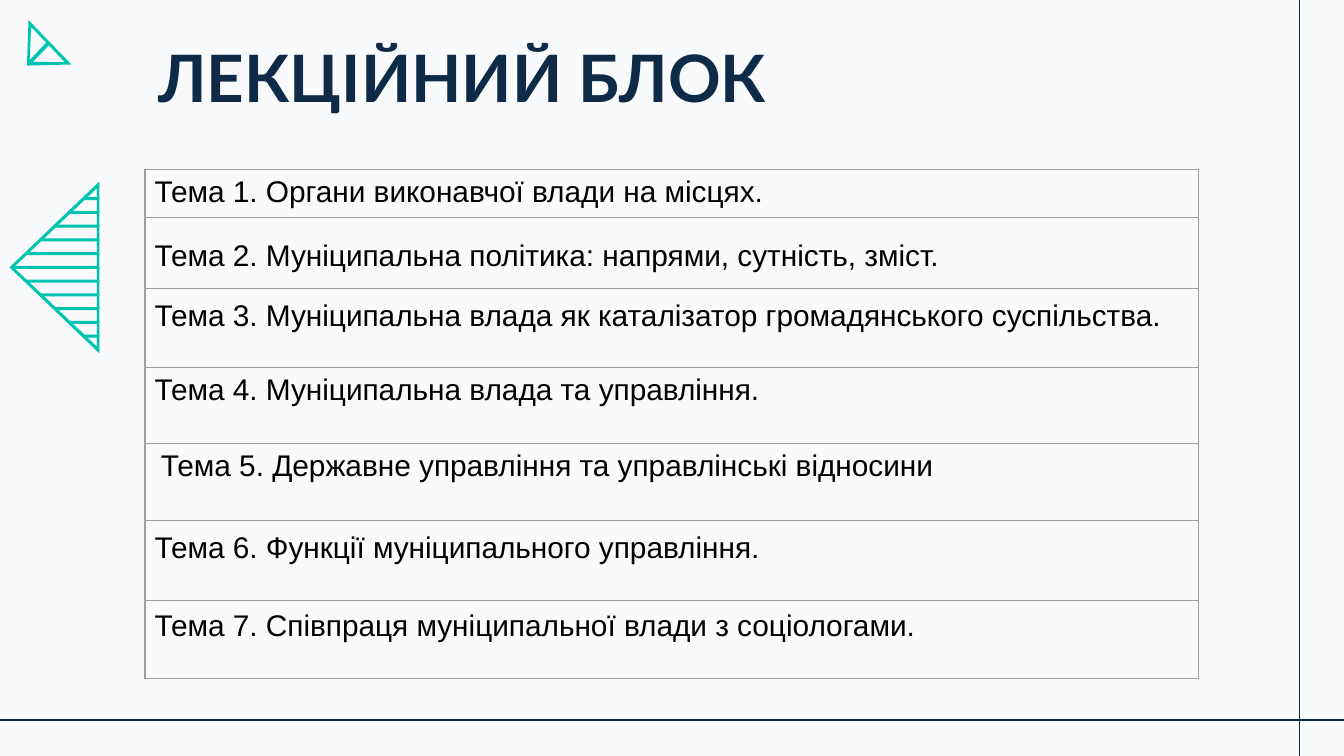
import pptx
import pptx.dml.color
import pptx.enum.shapes
import pptx.enum.text
import pptx.oxml
import pptx.oxml.ns
import pptx.util
from pptx.util import Cm

COLORS = {
    "background": "F8FAFB",
    "navy": "0E2A47",
    "teal": "00C3B1",
    "border": "9E9E9E",
    "text": "000000",
}

# Topic, row height (cm), line spacing, left indent (cm)
TOPICS = [
    ("Тема 1. Органи виконавчої влади на місцях.", 0.91, 1.07, 0.18),
    ("Тема 2. Муніципальна політика: напрями, сутність, зміст.", 1.34, 1.07, 0.18),
    ("Тема 3. Муніципальна влада як каталізатор громадянського суспільства.", 1.49, 1.2, 0.18),
    ("Тема 4. Муніципальна влада та управління.", 1.44, 1.07, 0.18),
    ("Тема 5. Державне управління та управлінські відносини", 1.46, 1.07, 0.3),
    ("Тема 6. Функції муніципального управління.", 1.51, 1.2, 0.18),
    ("Тема 7. Співпраця муніципальної влади з соціологами.", 1.47, 1.15, 0.18),
]
CENTERED_ROW = 1


def color(name):
    return pptx.dml.color.RGBColor.from_string(COLORS[name])


def paint(shape):
    shape.shadow.inherit = False
    shape.fill.solid()
    shape.fill.fore_color.rgb = color("teal")
    shape.line.fill.background()


def format_run(paragraph, font_name, size, color_name, bold=False):
    font = paragraph.runs[0].font
    font.name = font_name
    font.size = pptx.util.Pt(size)
    font.bold = bold
    font.color.rgb = color(color_name)


def add_outline(slide, box, *contours):
    """Fill closed contours given in cm from the corner of the box."""
    left, top = box[:2]
    builder = None
    for contour in contours:
        points = [(Cm(left + x), Cm(top + y)) for x, y in contour]
        if builder is None:
            builder = slide.shapes.build_freeform(*points[0])
        else:
            builder.move_to(*points[0])
        builder.add_line_segments(points[1:], close=True)
    paint(builder.convert_to_shape())


def add_frame_lines(slide, box):
    left, top, width, height = box
    bleed = 0.15
    line_y, line_x = top + 13.61, left + 24.56
    for ends in (
        (left + width + bleed, line_y, left - bleed, line_y),
        (line_x, top + height + bleed, line_x, top - bleed),
    ):
        connector = slide.shapes.add_connector(
            pptx.enum.shapes.MSO_CONNECTOR.STRAIGHT, *map(Cm, ends))
        connector.line.color.rgb = color("navy")
        connector.line.width = pptx.util.Pt(0.75)
        properties = connector._element.spPr
        properties.append(pptx.oxml.parse_xml(
            f"<a:effectLst {pptx.oxml.ns.nsdecls('a')}/>"))


def add_corner_triangle(slide, box):
    width, height = box[2:]
    add_outline(slide, box,
                [(0.03, 0), (0, height), (width, 0.84)],
                [(0.08, 0.13), (0.71, 0.79), (0.05, 0.79)])
    # Diagonal stroke
    add_outline(slide, box, [(0.38, 0.41), (0, 0.81), (0.05, 0.86), (0.43, 0.46)])


def add_striped_triangle(slide, box):
    left, top, width, height = box
    middle = height / 2
    add_outline(slide, box,
                [(width, 0), (0, middle), (width, height)],
                [(width - 0.05, 0.13), (0.08, middle), (width - 0.05, height - 0.13)])
    # Stripes get shorter away from the middle
    thickness, step, shift = 0.06, 0.26, 0.27
    for index in range(-5, 6):
        start = 0.03 + shift * abs(index)
        stripe = slide.shapes.add_shape(
            pptx.enum.shapes.MSO_SHAPE.ROUNDED_RECTANGLE,
            Cm(left + start), Cm(top + middle + index * step - thickness / 2),
            Cm(width - start), Cm(thickness))
        stripe.adjustments[0] = 0.5
        paint(stripe)


def add_title(slide, box):
    title = slide.shapes.title
    title.left, title.top, title.width, title.height = map(Cm, box)
    frame = title.text_frame
    frame.text = "ЛЕКЦІЙНИЙ БЛОК"
    frame.word_wrap = True
    frame.auto_size = pptx.enum.text.MSO_AUTO_SIZE.NONE
    frame.vertical_anchor = pptx.enum.text.MSO_ANCHOR.BOTTOM
    frame.margin_left = frame.margin_right = Cm(0.25)
    frame.margin_top = frame.margin_bottom = Cm(0.25)
    paragraph = frame.paragraphs[0]
    paragraph.alignment = pptx.enum.text.PP_ALIGN.LEFT
    format_run(paragraph, "Lato", 35, "navy", bold=True)


def add_borders(cell):
    properties = cell._tc.get_or_add_tcPr()
    for position, side in enumerate("LRTB"):
        properties.insert(position, pptx.oxml.parse_xml(
            f"<a:ln{side} {pptx.oxml.ns.nsdecls('a')} w='9525'><a:solidFill>"
            f"<a:srgbClr val='{COLORS['border']}'/></a:solidFill></a:ln{side}>"))


def add_topics(slide, box):
    table = slide.shapes.add_table(len(TOPICS), 1, *map(Cm, box)).table
    table.first_row = table.horz_banding = False
    for index, (topic, height, spacing, indent) in enumerate(TOPICS):
        table.rows[index].height = Cm(height)
        cell = table.cell(index, 0)
        cell.fill.background()
        add_borders(cell)
        cell.margin_left = Cm(indent)
        cell.margin_right = cell.margin_bottom = 0
        cell.margin_top = Cm(0.08)
        anchor = pptx.enum.text.MSO_ANCHOR
        cell.vertical_anchor = anchor.MIDDLE if index == CENTERED_ROW else anchor.TOP
        cell.text_frame.text = topic
        paragraph = cell.text_frame.paragraphs[0]
        paragraph.line_spacing = spacing
        format_run(paragraph, "Arial", 16, "text")


def main():
    presentation = pptx.Presentation()
    presentation.slide_width, presentation.slide_height = Cm(25.4), Cm(14.29)
    slide = presentation.slides.add_slide(presentation.slide_layouts[5])
    slide.background.fill.solid()
    slide.background.fill.fore_color.rgb = color("background")

    add_frame_lines(slide, (0, 0, 25.4, 14.29))
    add_corner_triangle(slide, (0.51, 0.38, 0.84, 0.86))
    add_title(slide, (2.74, 0.64, 12.75, 1.8))
    add_striped_triangle(slide, (0.18, 3.43, 1.7, 3.25))
    add_topics(slide, (2.74, 3.2, 19.91, sum(row[1] for row in TOPICS)))
    presentation.save("out.pptx")


if __name__ == "__main__":
    main()
